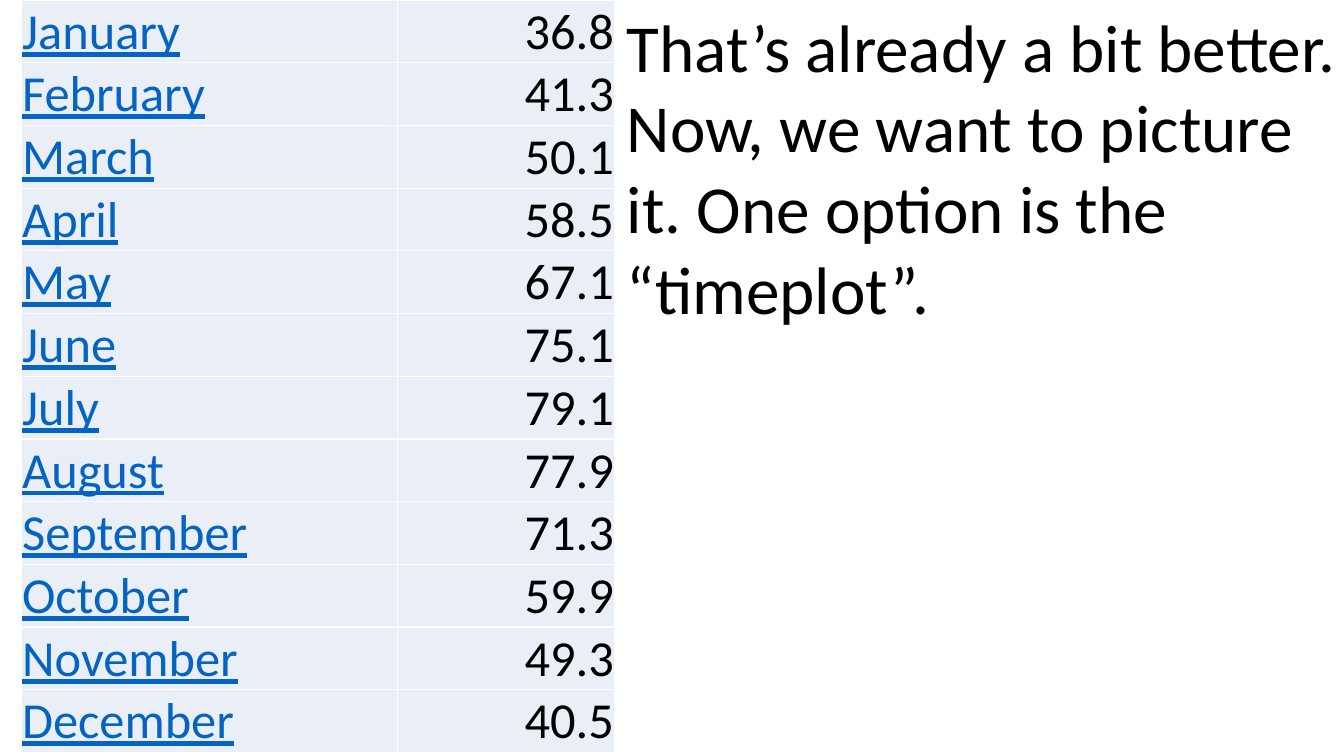
from lxml.etree import SubElement
from pptx import Presentation
from pptx.dml.color import RGBColor
from pptx.enum.text import MSO_ANCHOR, MSO_AUTO_SIZE, PP_ALIGN
from pptx.oxml.ns import qn
from pptx.util import Pt

PX = 9144  # EMU per px, 100 px to the inch
FONT = "Calibri"
COLORS = {"month": "0563C1", "text": "000000", "cell": "EAEFF7", "border": "FFFFFF"}

TEMPERATURES = [
    ("January", "36.8"), ("February", "41.3"), ("March", "50.1"),
    ("April", "58.5"), ("May", "67.1"), ("June", "75.1"),
    ("July", "79.1"), ("August", "77.9"), ("September", "71.3"),
    ("October", "59.9"), ("November", "49.3"), ("December", "40.5"),
]
COMMENT = [
    "That’s already a bit better.",
    "Now, we want to picture",
    "it. One option is the",
    "“timeplot”.",
]


def style_font(font, size, color):
    font.name = FONT
    font.size = Pt(size)
    font.color.rgb = RGBColor.from_string(COLORS[color])


def style_cell(cell):
    cell.vertical_anchor = MSO_ANCHOR.MIDDLE
    cell.margin_left = cell.margin_right = cell.margin_top = PX
    cell.margin_bottom = 0
    # Borders come before the fill in the cell properties
    properties = cell._tc.get_or_add_tcPr()
    for side in ("a:lnL", "a:lnR", "a:lnT", "a:lnB"):
        line = SubElement(properties, qn(side), w=str(Pt(1)))
        solid = SubElement(line, qn("a:solidFill"))
        SubElement(solid, qn("a:srgbClr"), val=COLORS["border"])
    cell.fill.solid()
    cell.fill.fore_color.rgb = RGBColor.from_string(COLORS["cell"])


presentation = Presentation()
presentation.slide_width = 1333 * PX
presentation.slide_height = 750 * PX
slide = presentation.slides.add_slide(presentation.slide_layouts[6])

# Monthly temperatures
row_height = 61
temperatures = slide.shapes.add_table(
    len(TEMPERATURES), 2, 21 * PX, 0, 589 * PX, len(TEMPERATURES) * row_height * PX
).table
temperatures.first_row = False
temperatures.horz_banding = False
for column, width in zip(temperatures.columns, (373, 216)):
    column.width = width * PX

for row, values in enumerate(TEMPERATURES):
    temperatures.rows[row].height = row_height * PX
    for column, value in enumerate(values):
        cell = temperatures.cell(row, column)
        style_cell(cell)
        cell.text_frame.text = value
        paragraph = cell.text_frame.paragraphs[0]
        font = paragraph.runs[0].font
        if column == 0:
            style_font(font, 36, "month")
            font.underline = True
        else:
            style_font(font, 36, "text")
            paragraph.alignment = PP_ALIGN.RIGHT

# Comment beside the table
comment = slide.shapes.add_textbox(612 * PX, 0, 732 * PX, 333 * PX).text_frame
comment.word_wrap = False
comment.auto_size = MSO_AUTO_SIZE.SHAPE_TO_FIT_TEXT
comment.text = "\n".join(COMMENT)
for paragraph in comment.paragraphs:
    style_font(paragraph.runs[0].font, 48, "text")

presentation.save("out.pptx")
